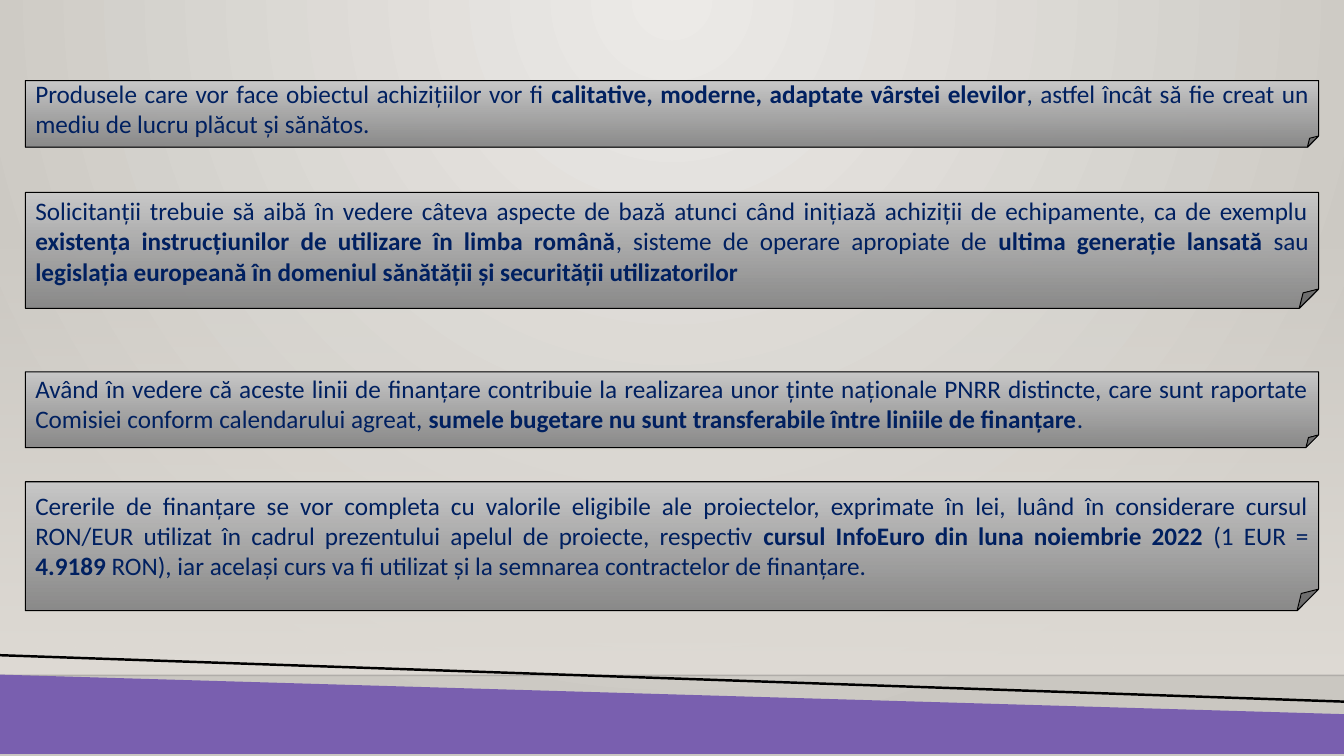
from lxml import etree
from pptx import Presentation
from pptx.dml.color import RGBColor
from pptx.enum.shapes import MSO_CONNECTOR, MSO_SHAPE
from pptx.enum.text import MSO_ANCHOR, PP_ALIGN
from pptx.oxml.ns import qn
from pptx.util import Cm, Pt

RECT, FOLDED = MSO_SHAPE.RECTANGLE, MSO_SHAPE.FOLDED_CORNER
STRAIGHT = MSO_CONNECTOR.STRAIGHT
MIDDLE, JUSTIFY = MSO_ANCHOR.MIDDLE, PP_ALIGN.JUSTIFY

# (top, height in cm, text with bold parts between **)
NOTES = [
    (2.03, 1.68,
     "Produsele care vor face obiectul achizițiilor vor fi **calitative, moderne, "
     "adaptate vârstei elevilor**, astfel încât să fie creat un mediu de lucru "
     "plăcut și sănătos."),
    (4.85, 2.92,
     "Solicitanții trebuie să aibă în vedere câteva aspecte de bază atunci când "
     "inițiază achiziții de echipamente, ca de exemplu **existența instrucțiunilor "
     "de utilizare în limba română**, sisteme de operare apropiate de **ultima "
     "generație lansată **sau **legislația europeană în domeniul sănătății și "
     "securității utilizatorilor**"),
    (9.37, 1.91,
     "Având în vedere că aceste linii de finanțare contribuie la realizarea unor "
     "ținte naționale PNRR distincte, care sunt raportate Comisiei conform "
     "calendarului agreat, **sumele bugetare nu sunt transferabile între liniile "
     "de finanțare**."),
    (12.14, 3.25,
     "Cererile de finanțare se vor completa cu valorile eligibile ale proiectelor, "
     "exprimate în lei, luând în considerare cursul RON/EUR utilizat în cadrul "
     "prezentului apelul de proiecte, respectiv **cursul InfoEuro din luna "
     "noiembrie 2022 **(1 EUR = **4.9189 **RON), iar același curs va fi utilizat "
     "și la semnarea contractelor de finanțare."),
]
WIDTH, HEIGHT = 33.87, 19.05
NOTE_LEFT, NOTE_WIDTH = 0.64, 32.59
GLOW_TOP, FLOOR = 5.61, 17.02
BAND_LEFT, BAND_RIGHT = 16.51, 17.68  # height of the sloping edge at each side


def rgb(value):
    return RGBColor.from_string(value)


def set_alpha(color, percent):
    etree.SubElement(color, qn("a:alpha")).set("val", str(percent * 1000))


def set_gradient(fill, colors):
    """Two-stop gradient from top to bottom."""
    fill.gradient()
    fill.gradient_angle = 270
    for stop, color in zip(fill.gradient_stops, colors):
        stop.color.rgb = rgb(color)


def add_line(s, x1, y1, x2, y2, color, width):
    line = s.shapes.add_connector(STRAIGHT, Cm(x1), Cm(y1), Cm(x2), Cm(y2))
    line.line.color.rgb = rgb(color)
    line.line.width = Pt(width)
    etree.SubElement(line._element.spPr, qn("a:effectLst"))
    return line


def add_background(s):
    set_gradient(s.background.fill, ("ECEAE7", "CAC7C1"))
    grad = next(s._element.iter(qn("a:gradFill")))
    grad.remove(grad.find(qn("a:lin")))
    circle = etree.SubElement(grad, qn("a:path"), path="circle")
    etree.SubElement(circle, qn("a:fillToRect"), l="43000", t="0", r="43000", b="100000")

    glow = s.shapes.add_shape(RECT, 0, Cm(GLOW_TOP), Cm(WIDTH), Cm(FLOOR - GLOW_TOP))
    glow.shadow.inherit = False
    glow.line.fill.background()
    set_gradient(glow.fill, ("DFDBD5", "DFDBD5"))
    set_alpha(next(glow._element.spPr.iter(qn("a:srgbClr"))), 0)

    floor = add_line(s, 0, FLOOR, WIDTH, FLOOR, "000001", 1)
    set_alpha(next(floor._element.spPr.iter(qn("a:srgbClr"))), 20)


def add_band(s):
    outline = s.shapes.build_freeform(0, BAND_LEFT, scale=Cm(1))
    outline.add_line_segments([(WIDTH, BAND_RIGHT), (WIDTH, HEIGHT), (0, HEIGHT)])
    band = outline.convert_to_shape()
    band.shadow.inherit = False
    band.fill.solid()
    band.fill.fore_color.rgb = rgb("795FAF")
    band.line.fill.background()
    add_line(s, 0, BAND_LEFT, WIDTH, BAND_RIGHT, "000000", 1.75)


def add_note(s, top, height, text):
    sp = s.shapes.add_shape(FOLDED, Cm(NOTE_LEFT), Cm(top), Cm(NOTE_WIDTH), Cm(height))
    sp.shadow.inherit = False
    set_gradient(sp.fill, ("C8C8C8", "848484"))
    set_alpha(list(sp._element.spPr.iter(qn("a:srgbClr")))[1], 92)
    sp.line.color.rgb = rgb("000000")
    sp.line.width = Pt(0.75)

    tf = sp.text_frame
    tf.word_wrap = True
    tf.vertical_anchor = MIDDLE
    p = tf.paragraphs[0]
    p.alignment = JUSTIFY
    p.font.name = "Calibri"
    p.font.size = Pt(18)
    for i, part in enumerate(text.split("**")):
        if part:
            r = p.add_run()
            r.text = part
            r.font.bold = i % 2 == 1
            r.font.color.rgb = rgb("002060")


def main():
    prs = Presentation()
    prs.slide_width, prs.slide_height = Cm(WIDTH), Cm(HEIGHT)
    s = prs.slides.add_slide(prs.slide_layouts[6])
    add_background(s)
    add_band(s)
    for note in NOTES:
        add_note(s, *note)
    prs.save("out.pptx")


if __name__ == "__main__":
    main()
